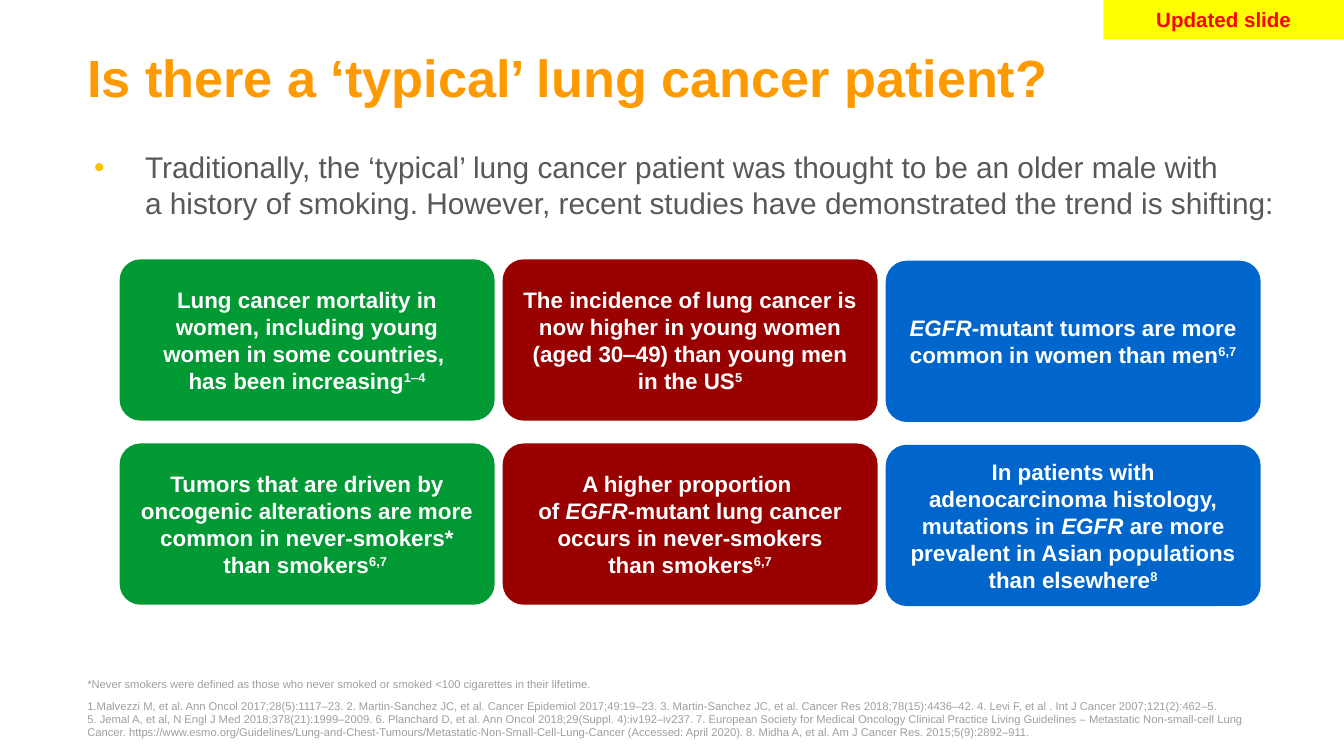
from lxml.etree import SubElement
from pptx import Presentation
from pptx.dml.color import RGBColor
from pptx.enum.shapes import MSO_SHAPE
from pptx.enum.text import MSO_ANCHOR, PP_ALIGN
from pptx.oxml.ns import qn
from pptx.util import Inches, Pt

COLORS = {
    "title": "FF9900", "body": "58595B", "note": "9E9FA2", "bullet": "FFC000",
    "green": "009933", "maroon": "990000", "blue": "0066CC",
    "white": "FFFFFF", "yellow": "FFFF00", "red": "FF0000",
}

CARDS = [
    [
        ["Lung cancer mortality in women, including young women in some countries, \nhas been increasing",
         ("1‒4", "sup")],
        ["The incidence of lung cancer is now higher in young women (aged 30‒49) than young men in the US",
         ("5", "sup")],
        [("EGFR", "ital"), "-mutant tumors are more common in women than men", ("6,7", "sup")],
    ],
    [
        ["Tumors that are driven by oncogenic alterations are more common in never-smokers* than smokers",
         ("6,7 ", "sup")],
        ["A higher proportion \nof ", ("EGFR", "ital"),
         "-mutant lung cancer occurs in never-smokers\nthan smokers", ("6,7", "sup")],
        ["In patients with adenocarcinoma histology, mutations in ", ("EGFR ", "ital"),
         "are more prevalent in Asian populations than elsewhere", ("8", "sup")],
    ],
]
COLUMNS = [("green", 0), ("maroon", 0), ("blue", 0.01)]

INTRO = ("Traditionally, the ‘typical’ lung cancer patient was thought to be an older male with\n"
         "a history of smoking. However, recent studies have demonstrated the trend is shifting:")
NOTE = "*Never smokers were defined as those who never smoked or smoked <100 cigarettes in their lifetime."
SOURCES = (
    "1.Malvezzi M, et al. Ann Oncol 2017;28(5):1117‒23. "
    "2. Martin-Sanchez JC, et al. Cancer Epidemiol 2017;49:19–23. "
    "3. Martin-Sanchez JC, et al. Cancer Res 2018;78(15):4436–42. "
    "4. Levi F, et al . Int J Cancer 2007;121(2):462‒5. \n"
    "5. Jemal A, et al, N Engl J Med 2018;378(21):1999–2009. "
    "6. Planchard D, et al. Ann Oncol 2018;29(Suppl. 4):iv192–iv237. "
    "7. European Society for Medical Oncology Clinical Practice Living Guidelines – "
    "Metastatic Non-small-cell Lung Cancer. "
    "https://www.esmo.org/Guidelines/Lung-and-Chest-Tumours/Metastatic-Non-Small-Cell-Lung-Cancer "
    "(Accessed: April 2020). 8. Midha A, et al. Am J Cancer Res. 2015;5(9):2892‒911."
)


def paint(color):
    """Return the named colour as an RGB value."""
    return RGBColor.from_string(COLORS[color])


def write(shape, parts, size, color, bold=False, align=PP_ALIGN.LEFT,
          anchor=MSO_ANCHOR.TOP, pad=(0, 0), before=0, line=None):
    """Fill a shape with one formatted paragraph and return it."""
    frame = shape.text_frame
    frame.word_wrap = True
    frame.vertical_anchor = anchor
    frame.margin_left = frame.margin_right = Inches(pad[0])
    frame.margin_top = frame.margin_bottom = Inches(pad[1])
    para = frame.paragraphs[0]
    para.alignment = align
    para.space_before = Pt(before)
    para.line_spacing = line
    for part in parts:
        words, style = (part, "") if isinstance(part, str) else part
        for count, piece in enumerate(words.split("\n")):
            if count:
                para.add_line_break()
            run = para.add_run()
            run.text = piece
            font = run.font
            font.name, font.size, font.bold = "Arial", Pt(size), bold
            font.italic = style == "ital"
            font.color.rgb = paint(color)
            if style == "sup":
                run._r.get_or_add_rPr().set("baseline", "30000")
    return para


def add_text(slide, box, parts, **style):
    """Add a text box and return its paragraph."""
    shape = slide.shapes.add_textbox(*map(Inches, box))
    return write(shape, parts, **style)


def add_block(slide, kind, box, fill):
    """Add a plain filled shape without line or shadow."""
    shape = slide.shapes.add_shape(kind, *map(Inches, box))
    shape.shadow.inherit = False
    shape.fill.solid()
    shape.fill.fore_color.rgb = paint(fill)
    shape.line.fill.background()
    return shape


def add_bullet(para, indent):
    """Give a paragraph a coloured bullet with a hanging indent."""
    props = para._p.get_or_add_pPr()
    props.set("marL", str(Inches(indent)))
    props.set("indent", str(-Inches(indent)))
    tint = SubElement(props, qn("a:buClr"))
    SubElement(tint, qn("a:srgbClr"), val=COLORS["bullet"])
    SubElement(props, qn("a:buFont"), typeface="Arial")
    SubElement(props, qn("a:buChar"), char="•")


def add_header(slide, left, top):
    """Place the title and the bulleted introduction."""
    add_text(slide, (left, top, 7.56, 0.64), ["Is there a ‘typical’ lung cancer patient?"],
             size=28, color="title", bold=True, anchor=MSO_ANCHOR.MIDDLE, line=0.75)
    para = add_text(slide, (left, top + 0.76, 8.94, 0.64), [INTRO],
                    size=16, color="body", pad=(0.05, 0.05), before=6)
    add_bullet(para, 0.38)


def add_cards(slide, left, top, wide, high, gap_x, gap_y):
    """Place the grid of rounded cards, one colour to a column."""
    for row, cells in enumerate(CARDS):
        for col, (parts, (fill, drop)) in enumerate(zip(cells, COLUMNS)):
            box = (left + col * (wide + gap_x), top + row * (high + gap_y) + drop, wide, high)
            card = add_block(slide, MSO_SHAPE.ROUNDED_RECTANGLE, box, fill)
            card.adjustments[0] = 0.13
            write(card, parts, size=12, color="white", bold=True, align=PP_ALIGN.CENTER,
                  anchor=MSO_ANCHOR.MIDDLE, pad=(0.1, 0.05))


def add_footer(slide, left, top):
    """Place the footnote and the list of sources."""
    add_text(slide, (left, top, 8.47, 0.33), [NOTE], size=6, color="note",
             anchor=MSO_ANCHOR.BOTTOM, before=6, line=0.9)
    add_text(slide, (left, top + 0.39, 8.72, 0.4), [SOURCES], size=6, color="note")


def add_badge(slide, box):
    """Place the update label in the corner."""
    badge = add_block(slide, MSO_SHAPE.RECTANGLE, box, "yellow")
    write(badge, ["Updated slide"], size=11, color="red", bold=True,
          align=PP_ALIGN.CENTER, pad=(0.05, 0.05))


def main():
    """Build the slide and save it."""
    deck = Presentation()
    deck.slide_width, deck.slide_height = Inches(10), Inches(10 * 9 / 16)
    slide = deck.slides.add_slide(deck.slide_layouts[6])
    add_header(slide, 0.65, 0.3)
    add_cards(slide, 0.89, 1.93, 2.79, 1.2, 0.06, 0.17)
    add_footer(slide, 0.65, 4.81)
    add_badge(slide, (8.21, 0, 1.79, 0.29))
    deck.save("out.pptx")


if __name__ == "__main__":
    main()
